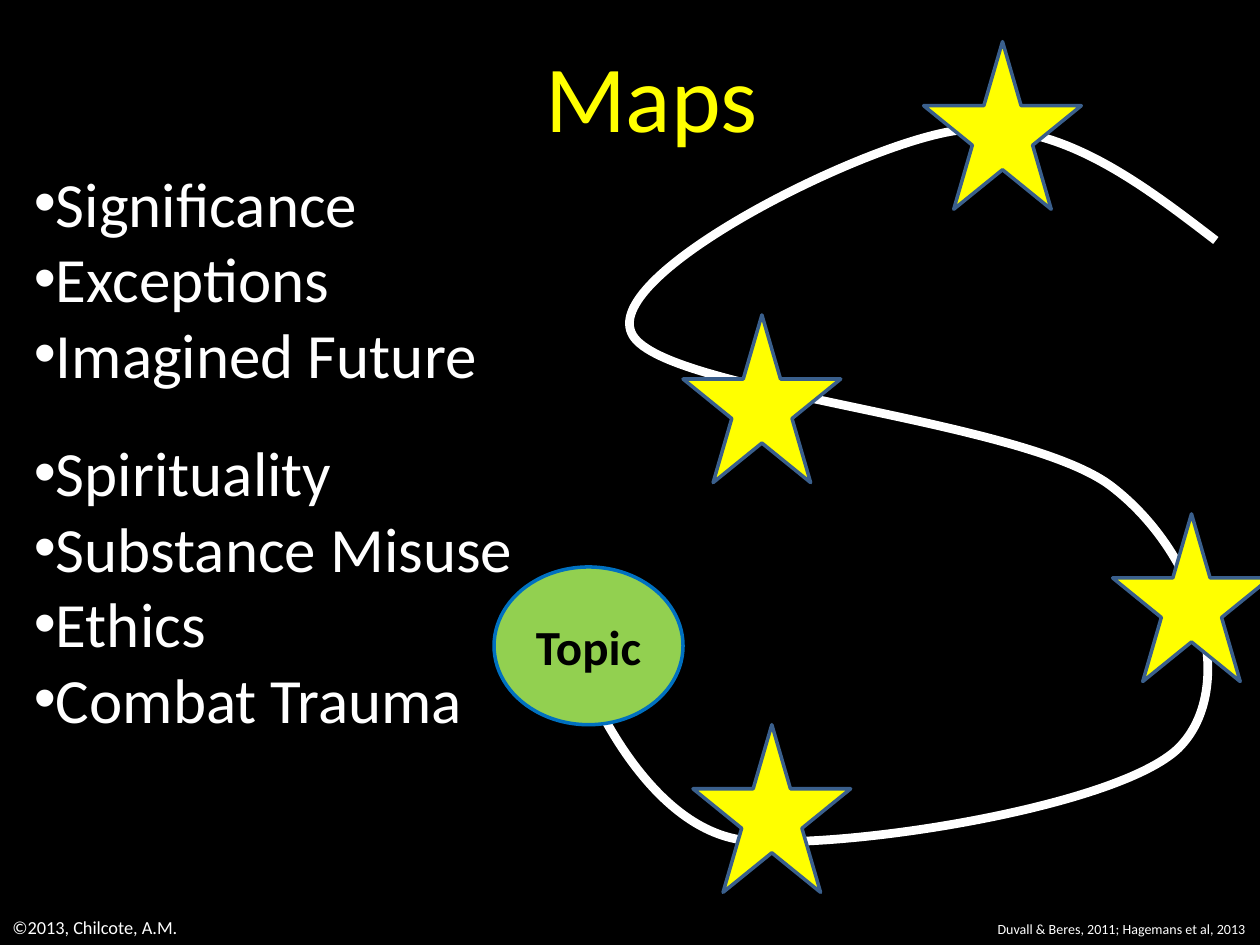
"""Build the Maps slide: two topic lists beside a winding road of stars."""
import lxml.etree
import pptx
import pptx.dml.color
import pptx.enum.shapes
import pptx.enum.text
import pptx.oxml.ns
import pptx.util

Cm = pptx.util.Cm
Pt = pptx.util.Pt
RGBColor = pptx.dml.color.RGBColor
qn = pptx.oxml.ns.qn
SHAPES = pptx.enum.shapes.MSO_SHAPE
ANCHOR = pptx.enum.text.MSO_ANCHOR
ALIGN = pptx.enum.text.PP_ALIGN
AUTO_SIZE = pptx.enum.text.MSO_AUTO_SIZE

BLACK = RGBColor(0x00, 0x00, 0x00)
WHITE = RGBColor(0xFF, 0xFF, 0xFF)
YELLOW = RGBColor(0xFF, 0xFF, 0x00)
GREEN = RGBColor(0x92, 0xD0, 0x50)
BLUE = RGBColor(0x00, 0x70, 0xC0)
STEEL = RGBColor(0x3A, 0x5F, 0x8C)


def format_text(shape, size, color, bold=False):
    for paragraph in shape.text_frame.paragraphs:
        for run in paragraph.runs:
            run.font.name = "Calibri"
            run.font.size = Pt(size)
            run.font.bold = bold
            run.font.color.rgb = color


def style_shape(shape, fill, line):
    shape.shadow.inherit = False
    shape.fill.solid()
    shape.fill.fore_color.rgb = fill
    shape.line.color.rgb = line
    shape.line.width = Pt(2)


presentation = pptx.Presentation()
presentation.slide_width = Cm(25.4)
presentation.slide_height = Cm(19.05)
slide = presentation.slides.add_slide(presentation.slide_layouts[3])
slide.background.fill.solid()
slide.background.fill.fore_color.rgb = BLACK

title, first_list, second_list = slide.placeholders
title.left, title.top, title.width, title.height = Cm(0.43), Cm(0.64), Cm(25.4), Cm(2.54)
title.text_frame.text = "Maps"
title.text_frame.vertical_anchor = ANCHOR.MIDDLE
title.text_frame.paragraphs[0].alignment = ALIGN.CENTER
format_text(title, 54, YELLOW)

lists = [
    (first_list, 3.18, 4.88, ["Significance", "Exceptions", "Imagined Future"]),
    (second_list, 8.61, 6.4, ["Spirituality", "Substance Misuse", "Ethics", "Combat Trauma"]),
]
for shape, top, height, items in lists:
    shape.left, shape.top, shape.width, shape.height = Cm(0.43), Cm(top), Cm(10.36), Cm(height)
    shape.text_frame.text = "\n".join(items)
    shape.text_frame.auto_size = AUTO_SIZE.NONE
    for paragraph in shape.text_frame.paragraphs:
        paragraph.space_before = Pt(0)
        properties = paragraph._p.get_or_add_pPr()
        properties.set("marL", "0")
        properties.set("indent", "0")
        lxml.etree.SubElement(properties, qn("a:buFont"), typeface="Arial")
        lxml.etree.SubElement(properties, qn("a:buChar"), char="•")
    format_text(shape, 36, WHITE)

road_start = (24.51, 4.85)
road_curves = [
    [(22.86, 3.58), (21.21, 2.34), (19.23, 2.64)],
    [(17.27, 2.95), (12.19, 5.51), (12.73, 6.71)],
    [(13.23, 7.9), (20.57, 8.41), (22.4, 9.8)],
    [(24.23, 11.2), (24.97, 13.89), (23.75, 15.09)],
    [(22.5, 16.28), (16.99, 17.14), (15.01, 16.94)],
    [(13.03, 16.71), (11.86, 13.82), (11.86, 13.82)],
]
builder = slide.shapes.build_freeform(Cm(road_start[0]), Cm(road_start[1]))
for curve in road_curves:
    builder.add_line_segments([(Cm(x), Cm(y)) for x, y in curve], close=False)
road = builder.convert_to_shape()
segments = road._element.xpath(".//a:lnTo")
for index in range(0, len(segments), 3):
    bezier = lxml.etree.Element(qn("a:cubicBezTo"))
    segments[index].addprevious(bezier)
    for segment in segments[index:index + 3]:
        bezier.append(segment[0])
        segment.getparent().remove(segment)
road.shadow.inherit = False
road.fill.background()
road.line.color.rgb = WHITE
road.line.width = Pt(5)

for left, top in [(13.97, 14.61), (22.43, 10.36), (13.77, 6.35), (18.62, 0.84)]:
    star = slide.shapes.add_shape(SHAPES.STAR_5_POINT, Cm(left), Cm(top), Cm(3.18), Cm(3.38))
    style_shape(star, YELLOW, STEEL)

topic = slide.shapes.add_shape(SHAPES.OVAL, Cm(9.96), Cm(11.43), Cm(3.81), Cm(3.18))
style_shape(topic, GREEN, BLUE)
topic.text_frame.text = "Topic"
topic.text_frame.vertical_anchor = ANCHOR.MIDDLE
topic.text_frame.paragraphs[0].alignment = ALIGN.CENTER
format_text(topic, 28, BLACK, bold=True)

footers = [
    (0, 18.34, 3.99, 0.71, 10.5, "©2013, Chilcote, A.M."),
    (19.86, 18.44, 5.54, 0.61, 8, "Duvall & Beres, 2011; Hagemans et al, 2013"),
]
for left, top, width, height, size, text in footers:
    footer = slide.shapes.add_textbox(Cm(left), Cm(top), Cm(width), Cm(height))
    footer.text_frame.text = text
    footer.text_frame.word_wrap = False
    footer.text_frame.auto_size = AUTO_SIZE.SHAPE_TO_FIT_TEXT
    format_text(footer, size, WHITE)

presentation.save("out.pptx")
